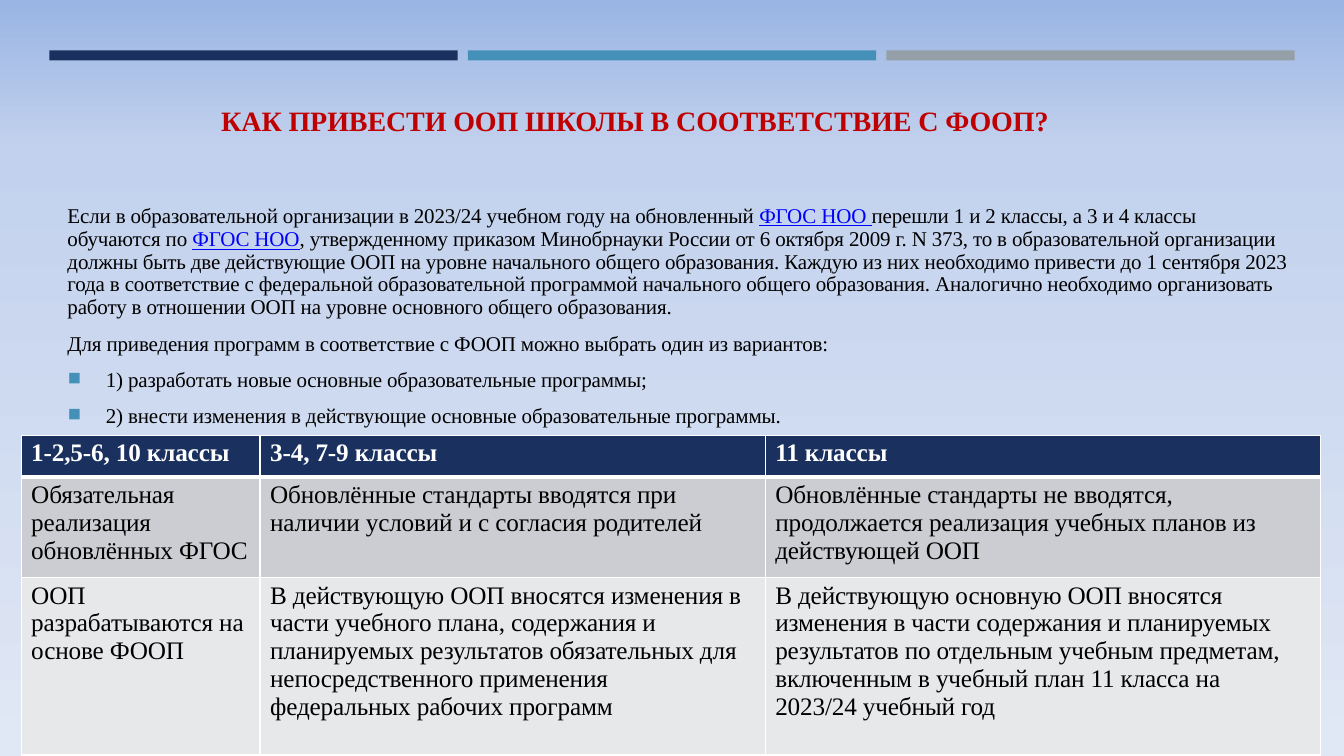
from copy import deepcopy
from lxml.etree import SubElement as Sub, Element
from pptx import Presentation
from pptx.dml.color import RGBColor as RGB
from pptx.enum.shapes import MSO_SHAPE as Shape
from pptx.enum.text import MSO_ANCHOR as Anchor, PP_ALIGN as Align
from pptx.oxml.ns import qn
from pptx.util import Inches, Pt

NAVY = RGB(0x1A, 0x31, 0x5F)
TEAL = RGB(0x45, 0x90, 0xB8)
GREY = RGB(0x95, 0x9F, 0xA7)
RED = RGB(0xC0, 0x00, 0x00)
BLUE = RGB(0x00, 0x00, 0xFF)
BLACK = RGB(0x00, 0x00, 0x00)
WHITE = RGB(0xFF, 0xFF, 0xFF)
DARK = RGB(0xCC, 0xCD, 0xD2)
LIGHT = RGB(0xE7, 0xE8, 0xEA)
SKY = [
    (0, RGB(0x9A, 0xB5, 0xE4)),
    (0.2, RGB(0xC2, 0xD1, 0xED)),
    (1, RGB(0xE1, 0xE8, 0xF5)),
]
FONT = "Times New Roman"

TITLE = "КАК ПРИВЕСТИ ООП ШКОЛЫ В СООТВЕТСТВИЕ С ФООП?"
BODY = [
    (["Если в образовательной организации в 2023/24 учебном году на обновленный ",
      ("ФГОС НОО ",), "перешли 1 и 2 классы, а 3 и 4 классы"], Pt(17.1), 1, False),
    (["обучаются по ", ("ФГОС НОО",),
      ", утвержденному приказом Минобрнауки России от 6 октября 2009 г. N 373, "
      "то в образовательной организации должны быть две действующие ООП на уровне "
      "начального общего образования. Каждую из них необходимо привести до "
      "1 сентября 2023 года в соответствие с федеральной образовательной программой "
      "начального общего образования. Аналогично необходимо организовать работу "
      "в отношении ООП на уровне основного общего образования."], 0.89, 1, False),
    (["Для приведения программ в соответствие с ФООП можно выбрать один из вариантов:"],
     1.0, 8.2, False),
    (["1) разработать новые основные образовательные программы;"], 1.0, 7.8, True),
    (["2) внести изменения в действующие основные образовательные программы."],
     1.0, 7.8, True),
]
COLS = [2.37, 5.01, 5.51]
ROWS = [
    (0.41, NAVY, WHITE, True,
     [["1-2,5-6, 10 классы"], ["3-4, 7-9 классы"], ["11 классы"]]),
    (1, DARK, BLACK, False, [
        ["Обязательная реализация обновлённых ФГОС"],
        ["Обновлённые стандарты вводятся при наличии условий и с согласия родителей"],
        ["Обновлённые стандарты не вводятся,",
         "продолжается реализация учебных планов из действующей ООП"]]),
    (1.76, LIGHT, BLACK, False, [
        ["ООП", "разрабатываются на основе ФООП"],
        ["В действующую ООП вносятся изменения в части учебного плана, содержания "
         "и планируемых результатов обязательных для непосредственного применения",
         "федеральных рабочих программ"],
        ["В действующую основную ООП вносятся",
         "изменения в части содержания и планируемых результатов по отдельным "
         "учебным предметам, включенным в учебный план 11 класса на",
         "2023/24 учебный год"]]),
]


def add_run(para, text, size, color, bold=False, line=False):
    run = para.add_run()
    run.text = text
    font = run.font
    font.name, font.size, font.bold = FONT, Pt(size), bold
    font.underline = line
    font.color.rgb = color
    run._r.get_or_add_rPr().set("spc", "-10")


def get_para(frame, num):
    return frame.add_paragraph() if num else frame.paragraphs[0]


def indent(para, left, first=0):
    props = para._p.get_or_add_pPr()
    props.set("marL", str(Inches(left)))
    props.set("indent", str(Inches(first)))
    return props


def add_mark(props):
    color = Sub(props, qn("a:buClr"))
    Sub(color, qn("a:srgbClr"), val=str(TEAL))
    Sub(props, qn("a:buSzPct"), val="90000")
    Sub(props, qn("a:buChar"), char="◾")


def add_edges(cell, top, base):
    props = cell._tc.get_or_add_tcPr()
    edges = [("L", 1), ("R", 1), ("T", top), ("B", base)]
    for num, (side, width) in enumerate(edges):
        edge = Element(qn("a:ln" + side), w=str(Pt(width)))
        fill = Sub(edge, qn("a:solidFill"))
        Sub(fill, qn("a:srgbClr"), val=str(WHITE))
        props.insert(num, edge)


def add_sky(slide):
    fill = slide.background.fill
    fill.gradient()
    fill.gradient_angle = 270
    last = fill.gradient_stops[1]._gs
    last.addprevious(deepcopy(last))
    for stop, (pos, color) in zip(fill.gradient_stops, SKY):
        stop.position = pos
        stop.color.rgb = color


def add_bars(slide):
    for num, color in enumerate([NAVY, TEAL, GREY]):
        bar = slide.shapes.add_shape(Shape.RECTANGLE, Inches(0.49 + 4.15 * num),
                                     Inches(0.5), Inches(4.05), Inches(0.1))
        bar.shadow.inherit = False
        bar.fill.solid()
        bar.fill.fore_color.rgb = color
        bar.line.fill.background()


def add_title(slide):
    title = slide.shapes.title
    title.left, title.top = Inches(0.66), Inches(1.02)
    title.width, title.height = Inches(11.27), Inches(0.4)
    frame = title.text_frame
    frame.vertical_anchor = Anchor.TOP
    para = frame.paragraphs[0]
    para.alignment = Align.CENTER
    para.line_spacing, para.space_before = 0.89, Pt(1)
    add_run(para, TITLE, 20, RED, True)


def add_body(slide):
    box = slide.shapes.add_textbox(Inches(0.66), Inches(2.01),
                                   Inches(12.3), Inches(2.27))
    frame = box.text_frame
    frame.word_wrap = True
    frame.margin_left = frame.margin_right = frame.margin_bottom = 0
    frame.margin_top = Inches(0.01)
    for num, (parts, pitch, gap, mark) in enumerate(BODY):
        para = get_para(frame, num)
        para.line_spacing, para.space_before = pitch, Pt(gap)
        if mark:
            add_mark(indent(para, 0.39, -0.38))
        else:
            indent(para, 0.01)
        for part in parts:
            if isinstance(part, tuple):
                add_run(para, part[0], 15, BLUE, line=True)
            else:
                add_run(para, part, 15, BLACK)


def fill_cell(cell, paras, back, color, bold):
    cell.margin_left = cell.margin_right = cell.margin_bottom = 0
    cell.margin_top = Inches(0.04)
    cell.fill.solid()
    cell.fill.fore_color.rgb = back
    for num, text in enumerate(paras):
        para = get_para(cell.text_frame, num)
        para.space_before = Pt(0 if num else 3)
        indent(para, 0.1)
        add_run(para, text, 18, color, bold)


def add_grid(slide):
    high = sum(row[0] for row in ROWS)
    grid = slide.shapes.add_table(len(ROWS), len(COLS), Inches(0.21), Inches(4.32),
                                  Inches(sum(COLS)), Inches(high)).table
    for col, width in zip(grid.columns, COLS):
        col.width = Inches(width)
    for r, (height, back, color, bold, cells) in enumerate(ROWS):
        grid.rows[r].height = Inches(height)
        for c, paras in enumerate(cells):
            cell = grid.cell(r, c)
            fill_cell(cell, paras, back, color, bold)
            add_edges(cell, 3 if r == 1 else 1, 3 if r == 0 else 1)


def main():
    deck = Presentation()
    deck.slide_width, deck.slide_height = Inches(13.33), Inches(7.5)
    slide = deck.slides.add_slide(deck.slide_layouts[5])
    add_sky(slide)
    add_bars(slide)
    add_title(slide)
    add_body(slide)
    add_grid(slide)
    deck.save("out.pptx")


if __name__ == "__main__":
    main()
